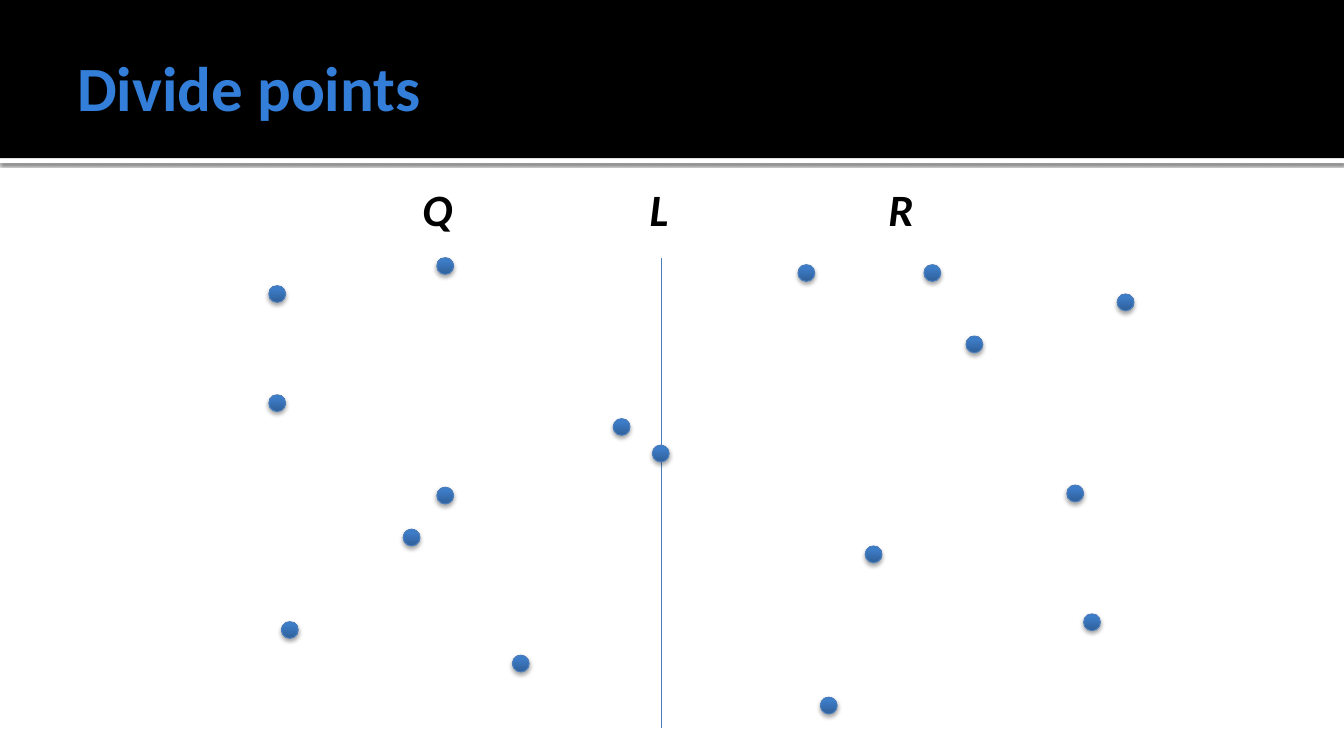
from copy import deepcopy
from dataclasses import dataclass

from lxml.etree import SubElement
from pptx import Presentation
from pptx.dml.color import RGBColor
from pptx.enum.shapes import MSO_CONNECTOR, MSO_SHAPE
from pptx.enum.text import MSO_ANCHOR, MSO_AUTO_SIZE, PP_ALIGN
from pptx.oxml.ns import qn
from pptx.util import Pt


@dataclass(frozen=True)
class Shadow:
    alpha: int
    blur: float
    dist: float


@dataclass(frozen=True)
class Theme:
    font: str = "Calibri"
    title_size: float = 45
    label_size: float = 32
    title: str = "337ED9"
    ink: str = "000000"
    paper: str = "FFFFFF"
    outline: str = "4B7EBC"
    dot_stops: tuple = ((0, "2F5F99"), (0.8, "3D7CC7"), (1, "3A7CCB"))
    dot_shadow: Shadow = Shadow(35, 3.1, 1.8)
    strip_shadow: Shadow = Shadow(60, 2.5, 0.8)


@dataclass(frozen=True)
class Band:
    top: float
    height: float
    color: str
    shadow: Shadow | None = None


@dataclass(frozen=True)
class Dot:
    x: float
    y: float


@dataclass(frozen=True)
class Label:
    text: str
    x: float


THEME = Theme()
WIDTH, HEIGHT = 960, 540
DOT_SIZE = 12

BANDS = [
    Band(113, 3.6, THEME.paper, THEME.strip_shadow),
    Band(0, 113, THEME.ink),
]
LEFT_DOTS = [
    Dot(192, 204), Dot(192, 282), Dot(312, 184), Dot(312, 348),
    Dot(201, 444), Dot(438, 299), Dot(288, 378), Dot(366, 468),
]
MIDDLE_DOT = Dot(466, 318)
RIGHT_DOTS = [
    Dot(660, 189), Dot(774, 438.5), Dot(690, 240), Dot(618, 390),
    Dot(570, 189), Dot(586, 498), Dot(762, 346.5), Dot(798, 210),
]
LABELS = [Label("L", 437.8), Label("Q", 279.4), Label("R", 610.6)]


def rgb(color: str) -> RGBColor:
    return RGBColor.from_string(color)


def set_format(target, values: dict) -> None:
    for name, value in values.items():
        setattr(target, name, value)


def write(tf, text: str, align, size: float, color: str, italic: bool) -> None:
    p = tf.paragraphs[0]
    p.alignment = align
    r = p.add_run()
    r.text = text
    set_format(r.font, {"name": THEME.font, "size": Pt(size),
                        "bold": True, "italic": italic})
    r.font.color.rgb = rgb(color)


def add_shadow(sp, shadow: Shadow) -> None:
    effects = sp._element.spPr.find(qn("a:effectLst"))
    outer = SubElement(effects, qn("a:outerShdw"), {
        "blurRad": str(Pt(shadow.blur)), "dist": str(Pt(shadow.dist)),
        "dir": "5400000", "rotWithShape": "0"})
    color = SubElement(outer, qn("a:srgbClr"), val=THEME.ink)
    SubElement(color, qn("a:alpha"), val=str(shadow.alpha * 1000))


def draw_band(s, band: Band) -> None:
    sp = s.shapes.add_shape(MSO_SHAPE.RECTANGLE, 0, Pt(band.top),
                            Pt(WIDTH), Pt(band.height))
    sp.fill.solid()
    sp.fill.fore_color.rgb = rgb(band.color)
    sp.line.fill.background()
    sp.shadow.inherit = False
    if band.shadow:
        add_shadow(sp, band.shadow)


def draw_divider(s, x: float, top: float, bottom: float) -> None:
    line = s.shapes.add_connector(MSO_CONNECTOR.STRAIGHT, Pt(x), Pt(top),
                                  Pt(x), Pt(bottom))
    line.line.color.rgb = rgb(THEME.outline)
    line.line.width = Pt(0.75)
    SubElement(line._element.spPr, qn("a:effectLst"))


def draw_title(s, text: str) -> None:
    sp = s.shapes.title
    set_format(sp, {"left": Pt(48), "top": Pt(12),
                    "width": Pt(864), "height": Pt(99)})
    tf = sp.text_frame
    set_format(tf, {"vertical_anchor": MSO_ANCHOR.MIDDLE, "word_wrap": True,
                    "auto_size": MSO_AUTO_SIZE.NONE,
                    "margin_left": Pt(7.2), "margin_right": Pt(3.6)})
    write(tf, text, PP_ALIGN.LEFT, THEME.title_size, THEME.title, False)
    s.shapes._spTree.append(sp._element)  # in front of the bands


def draw_dot(s, dot: Dot) -> None:
    sp = s.shapes.add_shape(MSO_SHAPE.OVAL, Pt(dot.x), Pt(dot.y),
                            Pt(DOT_SIZE), Pt(DOT_SIZE))
    sp.fill.gradient()
    sp.fill.gradient_angle = 90
    stops = sp._element.spPr.find(qn("a:gradFill")).find(qn("a:gsLst"))
    stops.append(deepcopy(stops[-1]))
    for stop, (position, color) in zip(sp.fill.gradient_stops, THEME.dot_stops):
        stop.position = position
        stop.color.rgb = rgb(color)
    sp.line.color.rgb = rgb(THEME.outline)
    sp.line.width = Pt(0.75)
    sp.shadow.inherit = False
    add_shadow(sp, THEME.dot_shadow)


def draw_label(s, label: Label) -> None:
    box = s.shapes.add_textbox(Pt(label.x), Pt(126), Pt(66), Pt(46))
    tf = box.text_frame
    set_format(tf, {"word_wrap": True,
                    "auto_size": MSO_AUTO_SIZE.SHAPE_TO_FIT_TEXT})
    write(tf, label.text, PP_ALIGN.CENTER, THEME.label_size, THEME.ink, True)


def main() -> None:
    prs = Presentation()
    prs.slide_width, prs.slide_height = Pt(WIDTH), Pt(HEIGHT)
    s = prs.slides.add_slide(prs.slide_layouts[5])

    # Header
    for band in BANDS:
        draw_band(s, band)
    draw_divider(s, 472.2, 184.3, 520)
    draw_title(s, "Divide points")

    # Point set and its two halves
    for dot in [*LEFT_DOTS, MIDDLE_DOT, *RIGHT_DOTS]:
        draw_dot(s, dot)
    for label in LABELS:
        draw_label(s, label)

    prs.save("out.pptx")


if __name__ == "__main__":
    main()
